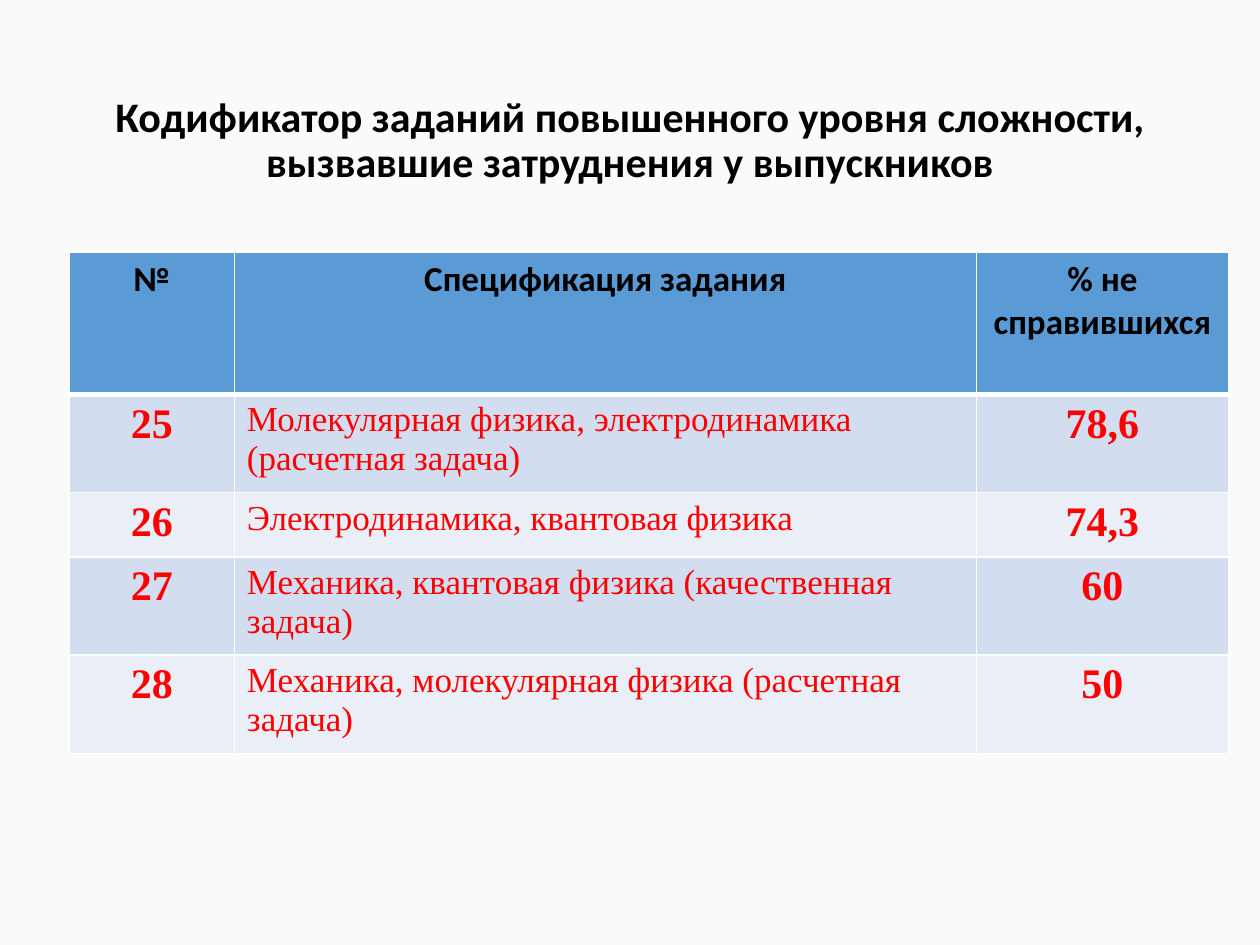
from pptx import Presentation
from pptx.dml.color import RGBColor
from pptx.enum.text import MSO_ANCHOR, PP_ALIGN
from pptx.oxml.ns import qn
from pptx.util import Inches, Pt
from lxml import etree

CENTER, LEFT = PP_ALIGN.CENTER, PP_ALIGN.LEFT
MIDDLE = MSO_ANCHOR.MIDDLE

SLIDE_WIDTH, SLIDE_HEIGHT = 10, 7.5
BLACK, RED, WHITE = "000000", "FF0000", "FFFFFF"
HEADER_FILL = "5B9BD5"
BAND_FILLS = ("D2DEEF", "EAEFF7")
SANS, SERIF = "Calibri", "Times New Roman"

TITLE = ("Кодификатор заданий повышенного уровня сложности, "
         "вызвавшие затруднения у выпускников")
HEADINGS = ("№", "Спецификация задания", "% не справившихся")
TASKS = (
    ("25", "Молекулярная физика, электродинамика (расчетная задача)", "78,6"),
    ("26", "Электродинамика, квантовая физика", "74,3"),
    ("27", "Механика, квантовая физика (качественная задача)", "60"),
    ("28", "Механика, молекулярная физика (расчетная задача)", "50"),
)
COLUMN_WIDTHS = (1.31, 5.89, 2)
ROW_HEIGHTS = (1.13, 0.78, 0.51, 0.78, 0.78)


def color(hex_code):
    return RGBColor.from_string(hex_code)


def write(frame, text, font_name, size, hex_code, bold=True, align=CENTER):
    frame.text = text
    paragraph = frame.paragraphs[0]
    paragraph.alignment = align
    for run in paragraph.runs:
        run.font.name = font_name
        run.font.size = Pt(size)
        run.font.bold = bold
        run.font.color.rgb = color(hex_code)
    return paragraph


def add_title(slide):
    box = slide.shapes.add_textbox(
        Inches(0.069 * SLIDE_WIDTH), Inches(0.053 * SLIDE_HEIGHT),
        Inches(0.862 * SLIDE_WIDTH), Inches(0.193 * SLIDE_HEIGHT))
    frame = box.text_frame
    frame.word_wrap = True
    frame.vertical_anchor = MIDDLE
    write(frame, TITLE, SANS, 24, BLACK).line_spacing = 0.9


def set_borders(cell, top=1, bottom=1):
    """White lines on all four sides; widths in points."""
    properties = cell._tc.get_or_add_tcPr()
    for side, width in (("L", 1), ("R", 1), ("T", top), ("B", bottom)):
        line = etree.SubElement(properties, qn(f"a:ln{side}"), w=str(Pt(width)))
        fill = etree.SubElement(line, qn("a:solidFill"))
        etree.SubElement(fill, qn("a:srgbClr"), val=WHITE)


def fill_cell(cell, hex_code):
    cell.fill.solid()
    cell.fill.fore_color.rgb = color(hex_code)


def add_task_table(slide):
    table = slide.shapes.add_table(
        len(ROW_HEIGHTS), len(COLUMN_WIDTHS),
        Inches(0.055 * SLIDE_WIDTH), Inches(2),
        Inches(sum(COLUMN_WIDTHS)), Inches(sum(ROW_HEIGHTS))).table
    for column, width in zip(table.columns, COLUMN_WIDTHS):
        column.width = Inches(width)
    for row, height in zip(table.rows, ROW_HEIGHTS):
        row.height = Inches(height)

    for column, heading in enumerate(HEADINGS):
        cell = table.cell(0, column)
        set_borders(cell, bottom=3)
        fill_cell(cell, HEADER_FILL)
        write(cell.text_frame, heading, SANS, 20, BLACK)

    for row, task in enumerate(TASKS, start=1):
        for column, text in enumerate(task):
            cell = table.cell(row, column)
            set_borders(cell, top=3 if row == 1 else 1)
            fill_cell(cell, BAND_FILLS[(row - 1) % 2])
            if column == 1:
                write(cell.text_frame, text, SERIF, 20, RED, bold=False, align=LEFT)
            else:
                write(cell.text_frame, text, SERIF, 24, RED)


def main():
    presentation = Presentation()
    presentation.slide_width = Inches(SLIDE_WIDTH)
    presentation.slide_height = Inches(SLIDE_HEIGHT)
    slide = presentation.slides.add_slide(presentation.slide_layouts[6])
    slide.background.fill.solid()
    slide.background.fill.fore_color.rgb = color("FAFAFA")
    add_title(slide)
    add_task_table(slide)
    presentation.save("out.pptx")


if __name__ == "__main__":
    main()
